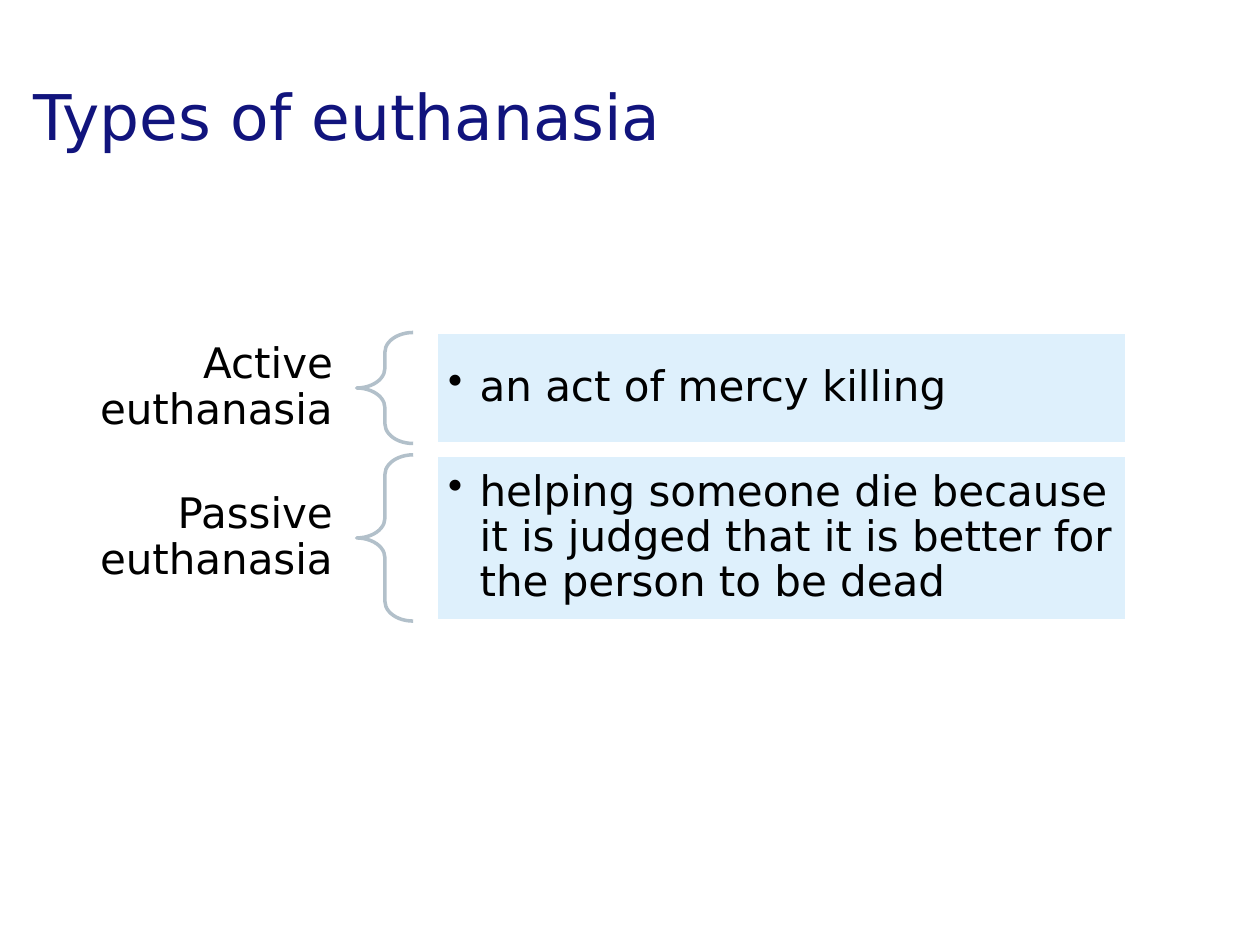
from pptx import Presentation
from pptx.dml.color import RGBColor
from pptx.enum.shapes import MSO_SHAPE
from pptx.enum.text import MSO_ANCHOR, MSO_AUTO_SIZE, PP_ALIGN
from pptx.oxml.ns import qn
from pptx.util import Pt
from lxml import etree

LEFT, RIGHT = PP_ALIGN.LEFT, PP_ALIGN.RIGHT
MIDDLE = MSO_ANCHOR.MIDDLE
NO_AUTOFIT = MSO_AUTO_SIZE.NONE
RECTANGLE, LEFT_BRACE = MSO_SHAPE.RECTANGLE, MSO_SHAPE.LEFT_BRACE

TITLE_ONLY = 5
LABEL_LEFT, LABEL_WIDTH, LABEL_HEIGHT = 42.5, 161.3, 63.4
BRACE_LEFT, BRACE_WIDTH = 203.8, 32.3
PANEL_LEFT, PANEL_WIDTH = 249, 394.6
FIRST_TOP, ROW_GAP = 190, 6.5
ROWS = [
    ("Active euthanasia", "an act of mercy killing", 63.4),
    ("Passive euthanasia", "helping someone die because it is judged that it is "
     "better for the person to be dead", 95),
]


def color(value):
    return RGBColor.from_string(value)


def set_attributes(target, values):
    for name, value in values.items():
        setattr(target, name, value)


class SlideBuilder:
    font_name = "DejaVu Sans"
    title_color = "11147D"
    text_color = "000000"
    brace_color = "B2C0CA"
    panel_color = "DEF0FC"
    panel_line = "FFFFFF"

    def __init__(self, slide):
        self.slide = slide

    def format_text(self, shape, text, size, text_color, margins, alignment=LEFT,
                    spacing=None, indent=0, bullet=None):
        frame = shape.text_frame
        set_attributes(frame, {
            "text": text, "word_wrap": True, "auto_size": NO_AUTOFIT,
            "vertical_anchor": MIDDLE,
            "margin_left": Pt(margins[0]), "margin_right": Pt(margins[0]),
            "margin_top": Pt(margins[1]), "margin_bottom": Pt(margins[1]),
        })
        paragraph = frame.paragraphs[0]
        set_attributes(paragraph, {"alignment": alignment, "line_spacing": spacing})
        properties = paragraph._p.get_or_add_pPr()
        if indent:
            properties.set("marL", str(Pt(indent)))
            properties.set("indent", str(Pt(-indent)))
        if bullet:
            etree.SubElement(properties, qn("a:buChar"), char=bullet)
        font = paragraph.runs[0].font
        set_attributes(font, {"name": self.font_name, "size": Pt(size)})
        font.color.rgb = color(text_color)

    def title(self, text, left, top, width, height):
        shape = self.slide.shapes.title
        set_attributes(shape, {"left": Pt(left), "top": Pt(top),
                               "width": Pt(width), "height": Pt(height)})
        self.format_text(shape, text, 36, self.title_color, (7.2, 3.6), indent=15)

    def label(self, text, left, top, width, height):
        shape = self.slide.shapes.add_textbox(Pt(left), Pt(top), Pt(width), Pt(height))
        self.format_text(shape, text, 24, self.text_color, (13.5, 5), RIGHT, 0.9)

    def shape(self, kind, left, top, width, height, line_color):
        shape = self.slide.shapes.add_shape(kind, Pt(left), Pt(top), Pt(width), Pt(height))
        shape.shadow.inherit = False
        shape.line.color.rgb = color(line_color)
        shape.line.width = Pt(2)
        return shape

    def brace(self, left, top, width, height):
        shape = self.shape(LEFT_BRACE, left, top, width, height, self.brace_color)
        shape.fill.background()
        shape.adjustments[0] = 0.35
        shape.adjustments[1] = 0.5

    def panel(self, text, left, top, width, height):
        shape = self.shape(RECTANGLE, left, top, width, height, self.panel_line)
        shape.fill.solid()
        shape.fill.fore_color.rgb = color(self.panel_color)
        self.format_text(shape, text, 24, self.text_color, (7.2, 7.2),
                         spacing=0.9, indent=18, bullet="•")


def main():
    presentation = Presentation()
    set_attributes(presentation, {"slide_width": Pt(720), "slide_height": Pt(540)})
    layout = presentation.slide_layouts[TITLE_ONLY]
    builder = SlideBuilder(presentation.slides.add_slide(layout))
    builder.title("Types of euthanasia", 12, 24, 678, 84)

    top = FIRST_TOP
    for term, meaning, height in ROWS:
        label_top = top + (height - LABEL_HEIGHT) / 2
        builder.label(term, LABEL_LEFT, label_top, LABEL_WIDTH, LABEL_HEIGHT)
        builder.brace(BRACE_LEFT, top, BRACE_WIDTH, height)
        builder.panel(meaning, PANEL_LEFT, top, PANEL_WIDTH, height)
        top += height + ROW_GAP

    presentation.save("out.pptx")


if __name__ == "__main__":
    main()
